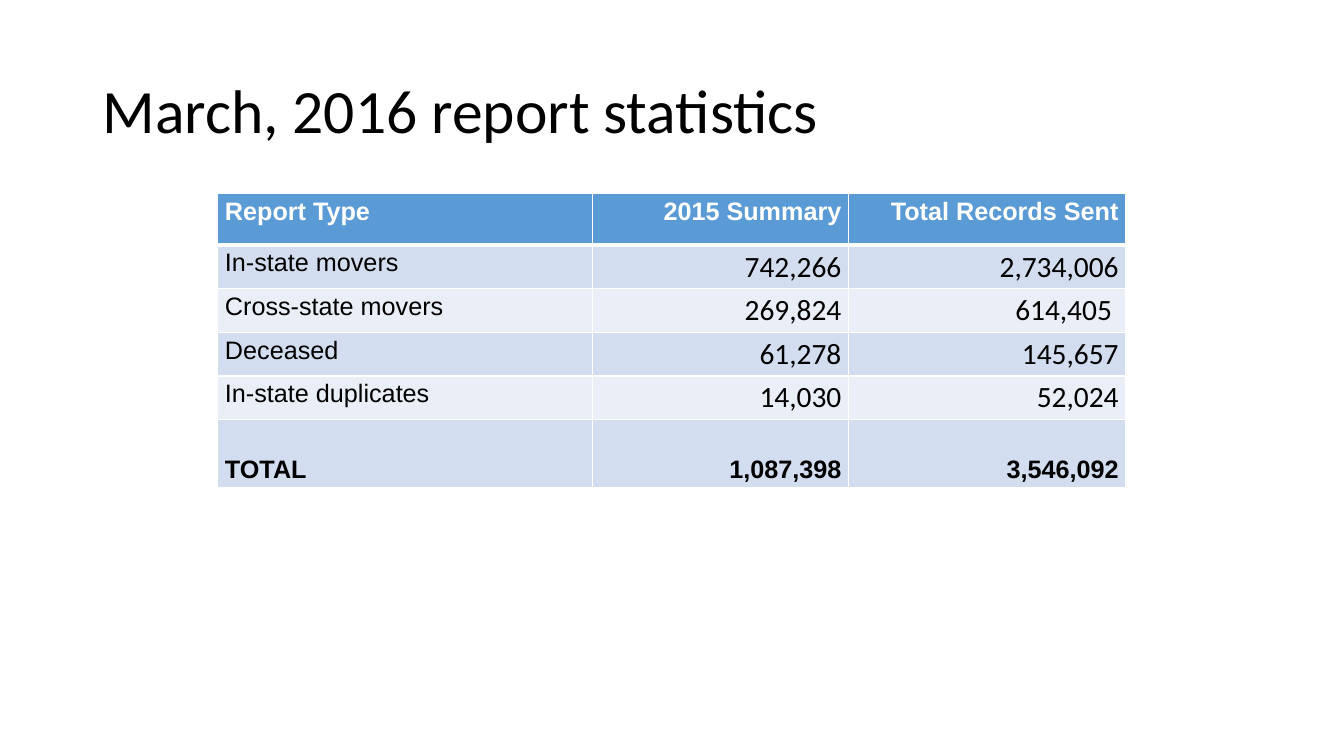
from lxml import etree
from pptx import Presentation
from pptx.dml.color import RGBColor
from pptx.enum.text import MSO_ANCHOR, MSO_AUTO_SIZE, PP_ALIGN
from pptx.oxml.ns import qn
from pptx.util import Pt

LEFT, RIGHT = PP_ALIGN.LEFT, PP_ALIGN.RIGHT
TOP, MIDDLE, BOTTOM = MSO_ANCHOR.TOP, MSO_ANCHOR.MIDDLE, MSO_ANCHOR.BOTTOM
NO_FIT = MSO_AUTO_SIZE.NONE

BLACK, WHITE = "000000", "FFFFFF"
HEAD, DARK, LIGHT = "5B9BD5", "D2DEEF", "EAEFF7"
COLS = [267.84, 182.88, 198]
HEIGHTS = [37, 31.1, 31.1, 31.1, 31.1, 48.96]
ROWS = [
    ["Report Type", "2015 Summary", "Total Records Sent"],
    ["In-state movers", "742,266", "2,734,006"],
    ["Cross-state movers", "269,824", "614,405 "],
    ["Deceased", "61,278", "145,657"],
    ["In-state duplicates", "14,030", "52,024"],
    ["TOTAL", "1,087,398", "3,546,092"],
]


def color(code):
    """Turn a hex string into a colour."""
    return RGBColor.from_string(code)


def write(frame, text, font="Arial", size=18, bold=False, ink=BLACK, align=LEFT, lead=None):
    """Put formatted text in the first paragraph of a frame."""
    para = frame.paragraphs[0]
    para.alignment = align
    para.line_spacing = lead
    run = para.add_run()
    run.text = text
    run.font.name = font
    run.font.size = Pt(size)
    run.font.bold = bold
    run.font.color.rgb = color(ink)


def border(cell, base):
    """Draw white lines on the four sides of a cell."""
    props = cell._tc.get_or_add_tcPr()
    for side, width in (("L", 1), ("R", 1), ("T", 1), ("B", base)):
        line = etree.SubElement(props, qn(f"a:ln{side}"), w=str(Pt(width)))
        fill = etree.SubElement(line, qn("a:solidFill"))
        etree.SubElement(fill, qn("a:srgbClr"), val=WHITE)


def title(slide, text, left, top, width, height):
    """Place the slide title in its box."""
    shape = slide.shapes.title
    shape.left, shape.top = Pt(left), Pt(top)
    shape.width, shape.height = Pt(width), Pt(height)
    frame = shape.text_frame
    frame.auto_size = NO_FIT
    frame.vertical_anchor = MIDDLE
    write(frame, text, font="Calibri", size=44, lead=0.9)


def report(slide, left, top, width, height):
    """Place the report table in its box."""
    table = slide.shapes.add_table(
        len(ROWS), len(COLS), Pt(left), Pt(top), Pt(width), Pt(height)
    ).table
    for col, size in zip(table.columns, COLS):
        col.width = Pt(size)
    for r, (values, size) in enumerate(zip(ROWS, HEIGHTS)):
        table.rows[r].height = Pt(size)
        head, total = r == 0, r == len(ROWS) - 1
        for c, text in enumerate(values):
            cell = table.cell(r, c)
            cell.margin_left = cell.margin_right = Pt(5.2)
            cell.margin_top = cell.margin_bottom = Pt(2.7)
            cell.vertical_anchor = BOTTOM if total else TOP
            border(cell, 3 if head else 1)
            cell.fill.solid()
            cell.fill.fore_color.rgb = color(HEAD if head else DARK if r % 2 else LIGHT)
            count = c > 0 and not head and not total
            write(
                cell.text_frame,
                text,
                font="Calibri" if count else "Arial",
                size=21 if count else 18,
                bold=head or total,
                ink=WHITE if head else BLACK,
                align=RIGHT if c else LEFT,
            )


def main():
    """Build and save the slide."""
    deck = Presentation()
    deck.slide_width, deck.slide_height = Pt(960), Pt(540)
    slide = deck.slides.add_slide(deck.slide_layouts[5])
    report(slide, 155.52, 138.24, sum(COLS), sum(HEIGHTS))
    title(slide, "March, 2016 report statistics", 66, 28.75, 828, 104.4)
    deck.save("out.pptx")


if __name__ == "__main__":
    main()
